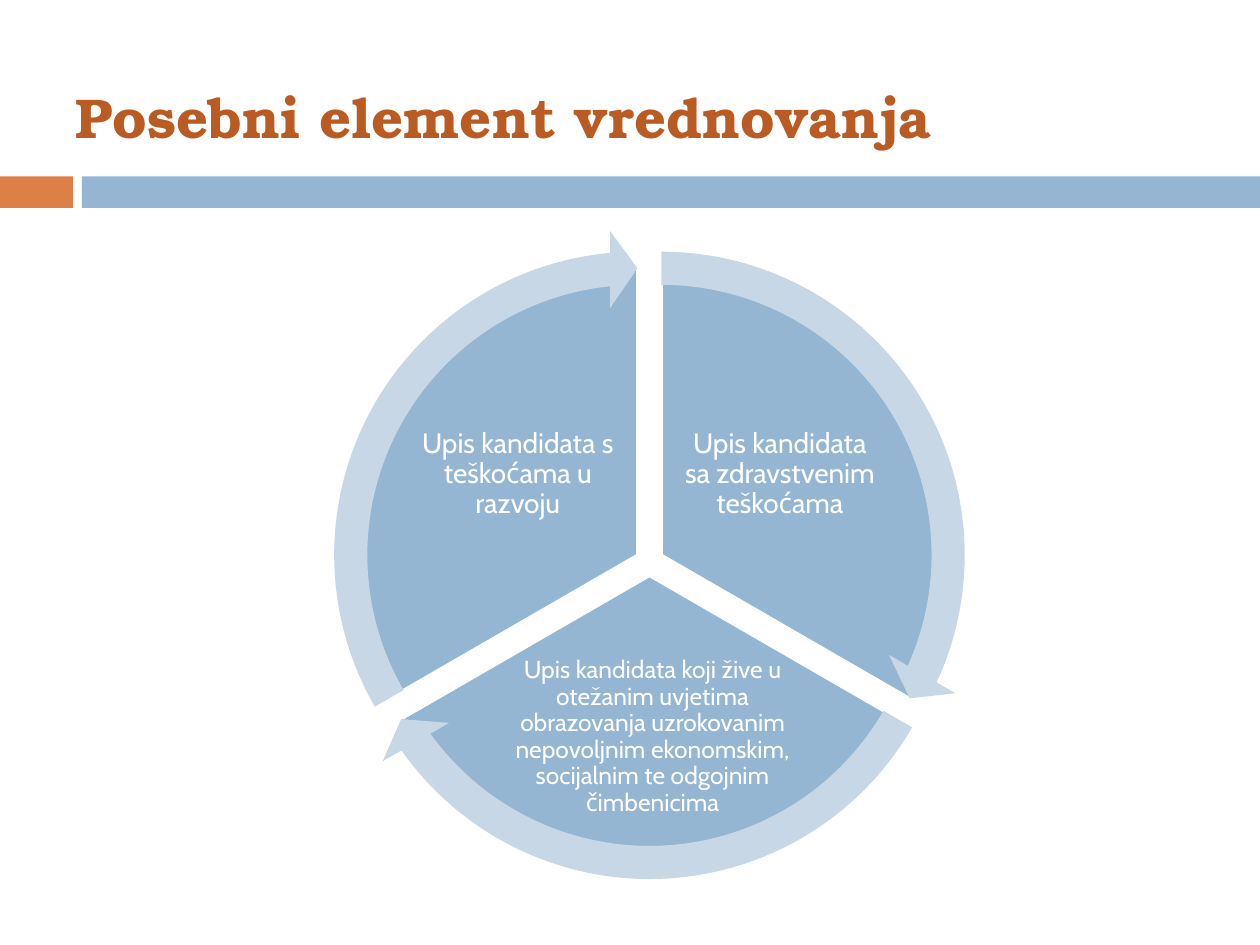
import math

import pptx
import pptx.util
from pptx.dml.color import RGBColor
from pptx.enum.shapes import MSO_SHAPE
from pptx.enum.text import MSO_ANCHOR, MSO_AUTO_SIZE, PP_ALIGN

Inches, Pt = pptx.util.Inches, pptx.util.Pt

WHITE = RGBColor(0xFF, 0xFF, 0xFF)
BLUE = RGBColor(0x94, 0xB6, 0xD2)
PALE_BLUE = RGBColor(0xC8, 0xD7, 0xE5)
ORANGE = RGBColor(0xDD, 0x80, 0x47)
RUST = RGBColor(0xB9, 0x5B, 0x22)

TITLE = "Posebni element vrednovanja"
BARS = [((0, 1.4, 0.58, 0.25), ORANGE), ((0.65, 1.4, 9.35, 0.25), BLUE)]

# Start angle in degrees clockwise from the right, text, text box, text size
SECTORS = [
    (270, "Upis kandidata sa zdravstvenim teškoćama", (5.37, 3.08, 1.64, 1.37), 16),
    (30, "Upis kandidata koji žive u otežanim uvjetima obrazovanja uzrokovanim "
         "nepovoljnim ekonomskim, socijalnim te odgojnim čimbenicima",
     (3.95, 5.25, 2.46, 1.2), 14),
    (150, "Upis kandidata s teškoćama u razvoju", (3.29, 3.08, 1.64, 1.37), 16),
]
SWEEP = 120
HUB = (5.155, 4.46)
HUB_GAP = 0.11
PIE_SIZE, ARROW_SIZE = 4.59, 5.16
ARROW_THICKNESS, ARROW_HEAD_WIDTH = 0.051, 0.059
ARROW_HEAD_ANGLE = 3.275
ANGLE_UNIT = 0.6  # adjustment value of one degree


def add_shape(slide, kind, place, color, adjustments=()):
    shape = slide.shapes.add_shape(kind, *map(Inches, place))
    shape.shadow.inherit = False
    shape.fill.solid()
    shape.fill.fore_color.rgb = color
    shape.line.fill.background()
    for index, value in enumerate(adjustments):
        shape.adjustments[index] = value
    return shape


def sector_place(start, size):
    """Square of the given size, pushed out from the hub along the sector's middle."""
    middle = math.radians(start + SWEEP / 2)
    x = HUB[0] + HUB_GAP * math.cos(middle)
    y = HUB[1] + HUB_GAP * math.sin(middle)
    return x - size / 2, y - size / 2, size, size


def write(frame, text, alignment, inset, font):
    frame.word_wrap = True
    frame.auto_size = MSO_AUTO_SIZE.NONE
    frame.vertical_anchor = MSO_ANCHOR.MIDDLE
    for side in ("left", "top", "right", "bottom"):
        setattr(frame, f"margin_{side}", Inches(inset))
    para = frame.paragraphs[0]
    para.alignment = alignment
    span = para.add_run()
    span.text = text
    color = font.pop("color")
    for name, value in font.items():
        setattr(span.font, name, value)
    span.font.color.rgb = color
    return para


def main():
    deck = pptx.Presentation()
    deck.slide_width, deck.slide_height = Inches(10), Inches(7.5)
    slide = deck.slides.add_slide(deck.slide_layouts[5])

    for place, color in BARS:
        add_shape(slide, MSO_SHAPE.RECTANGLE, place, color)

    title = slide.shapes.title
    title.left, title.top, title.width, title.height = map(Inches, (0.5, 0.3, 9, 1.25))
    write(title.text_frame, TITLE, PP_ALIGN.LEFT, 0.1,
          {"name": "TeX Gyre Bonum", "size": Pt(32), "bold": True, "color": RUST})

    for start, text, place, size in SECTORS:
        end = (start + SWEEP) % 360
        pie = add_shape(slide, MSO_SHAPE.PIE, sector_place(start, PIE_SIZE), BLUE,
                        (start * ANGLE_UNIT, end * ANGLE_UNIT))
        pie.line.color.rgb = WHITE
        pie.line.width = Pt(1.5)
        box = slide.shapes.add_textbox(*map(Inches, place))
        para = write(box.text_frame, text, PP_ALIGN.CENTER, 0.02,
                     {"name": "Cabin", "size": Pt(size), "color": WHITE})
        para.line_spacing = 0.9

    for start, *_ in SECTORS:
        end = (start + SWEEP) % 360
        add_shape(slide, MSO_SHAPE.CIRCULAR_ARROW, sector_place(start, ARROW_SIZE), PALE_BLUE,
                  (ARROW_THICKNESS, ARROW_HEAD_ANGLE, end * ANGLE_UNIT - ARROW_HEAD_ANGLE,
                   start * ANGLE_UNIT, ARROW_HEAD_WIDTH))

    deck.save("out.pptx")


if __name__ == "__main__":
    main()
